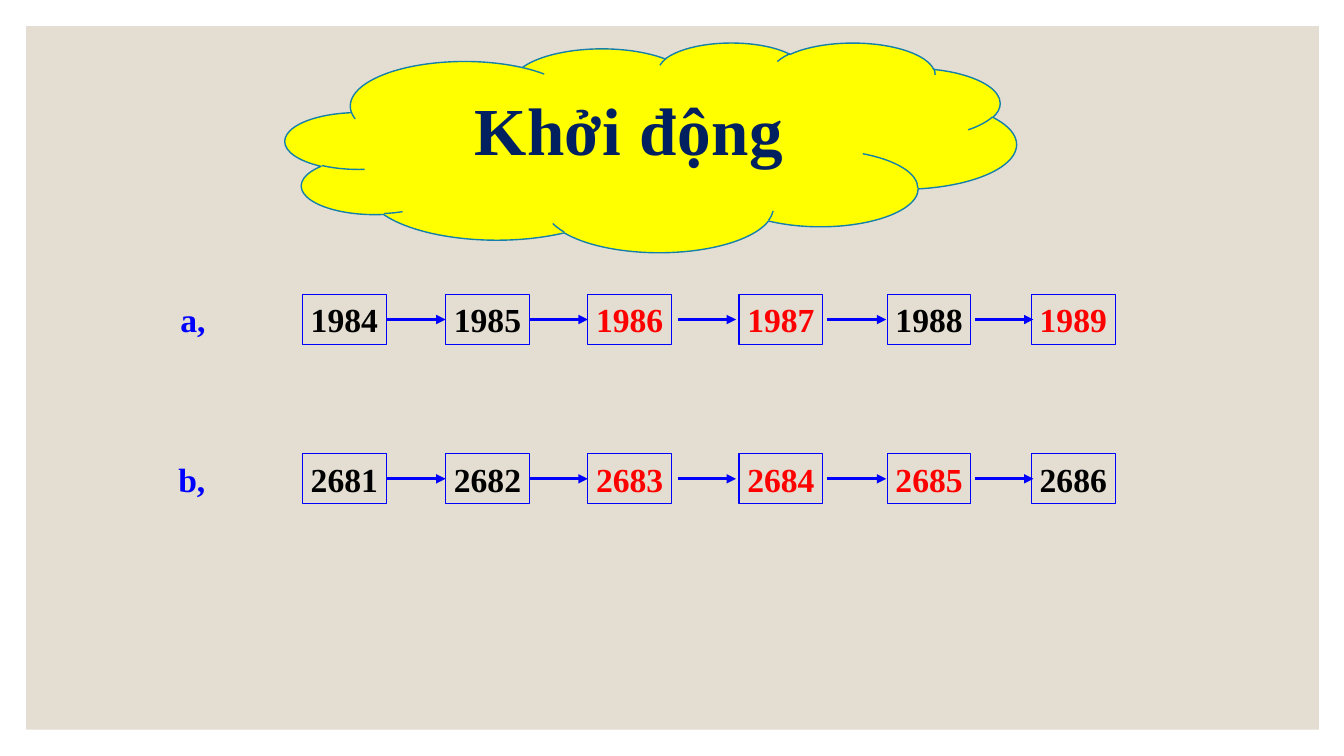
from lxml import etree
from pptx import Presentation
from pptx.dml.color import RGBColor
from pptx.enum import shapes, text
from pptx.oxml import ns
from pptx.util import Inches, Pt

# Content: label, label left, row top, numbers, positions of red answers
TITLE = "Khởi động"
ROWS = [
    ("a,", 1.69, 2.92, range(1984, 1990), {2, 3, 5}),
    ("b,", 1.67, 4.5, range(2681, 2687), {2, 3, 4}),
]
LEFTS = [3, 4.42, 5.83, 7.33, 8.8, 10.23]
WIDE, HIGH = 0.83, 0.5
GLUED = 2  # the first arrows touch both boxes
LOOSE = {2: (6.72, 7.3), 3: (8.2, 8.79), 4: (9.67, 10.25)}
FONT = "Times New Roman"
HUES = {"panel": "E3DED1", "blue": "0000FF", "black": "000000", "red": "FF0000",
        "cloud": "FFFF00", "edge": "1580A9", "title": "002060"}
KIND = shapes.MSO_SHAPE

deck = Presentation()
deck.slide_width, deck.slide_height = Inches(13.33), Inches(7.5)
slide = deck.slides.add_slide(deck.slide_layouts[6])


def color(key):
    return RGBColor.from_string(HUES[key])


def draw(kind, area, fill=None, line=None, width=0.75):
    shape = slide.shapes.add_shape(kind, *map(Inches, area))
    shape.shadow.inherit = False
    if fill:
        shape.fill.solid()
        shape.fill.fore_color.rgb = color(fill)
    else:
        shape.fill.background()
    if line:
        shape.line.color.rgb = color(line)
        shape.line.width = Pt(width)
    else:
        shape.line.fill.background()
    return shape


def write(shape, words, size, hue, align=text.PP_ALIGN.CENTER):
    frame = shape.text_frame
    frame.text = words
    para = frame.paragraphs[0]
    para.alignment = align
    font = para.runs[0].font
    font.name, font.size, font.bold = FONT, Pt(size), True
    font.color.rgb = color(hue)
    return frame


def arrow(x1, x2, y):
    link = slide.shapes.add_connector(
        shapes.MSO_CONNECTOR.STRAIGHT, *map(Inches, (x1, y, x2, y)))
    link.line.color.rgb = color("blue")
    link.line.width = Pt(2.25)
    etree.SubElement(link.line._get_or_add_ln(), ns.qn("a:tailEnd"), type="triangle")
    etree.SubElement(link._element.spPr, ns.qn("a:effectLst"))
    return link


# Background panel
draw(KIND.RECTANGLE, (0.26, 0.26, 12.82, 6.98), "panel")

# Number rows
for label, left, top, numbers, reds in ROWS:
    tag = slide.shapes.add_textbox(*map(Inches, (left, top, 0.58, HIGH)))
    write(tag, label, 24, "blue", text.PP_ALIGN.LEFT).word_wrap = True

    boxes = []
    for i, (x, number) in enumerate(zip(LEFTS, numbers)):
        box = draw(KIND.RECTANGLE, (x, top, WIDE, HIGH), line="blue")
        frame = write(box, str(number), 24, "red" if i in reds else "black")
        frame.margin_left = frame.margin_right = 0
        frame.vertical_anchor = text.MSO_ANCHOR.MIDDLE
        boxes.append(box)

    for i in range(len(boxes) - 1):
        ends = LOOSE.get(i, (LEFTS[i] + WIDE, LEFTS[i + 1]))
        link = arrow(*ends, top + HIGH / 2)
        if i < GLUED:
            link.begin_connect(boxes[i], 3)
            link.end_connect(boxes[i + 1], 1)

# Title cloud
draw(KIND.CLOUD, (2.83, 0.42, 7.25, 2.08), "cloud", "edge", 1)
head = slide.shapes.add_textbox(*map(Inches, (4.58, 0.83, 3.32, 0.91)))
frame = write(head, TITLE, 48, "title")
frame.word_wrap = False
frame.paragraphs[0].runs[0].font._element.set("spc", "50")

deck.save("out.pptx")
